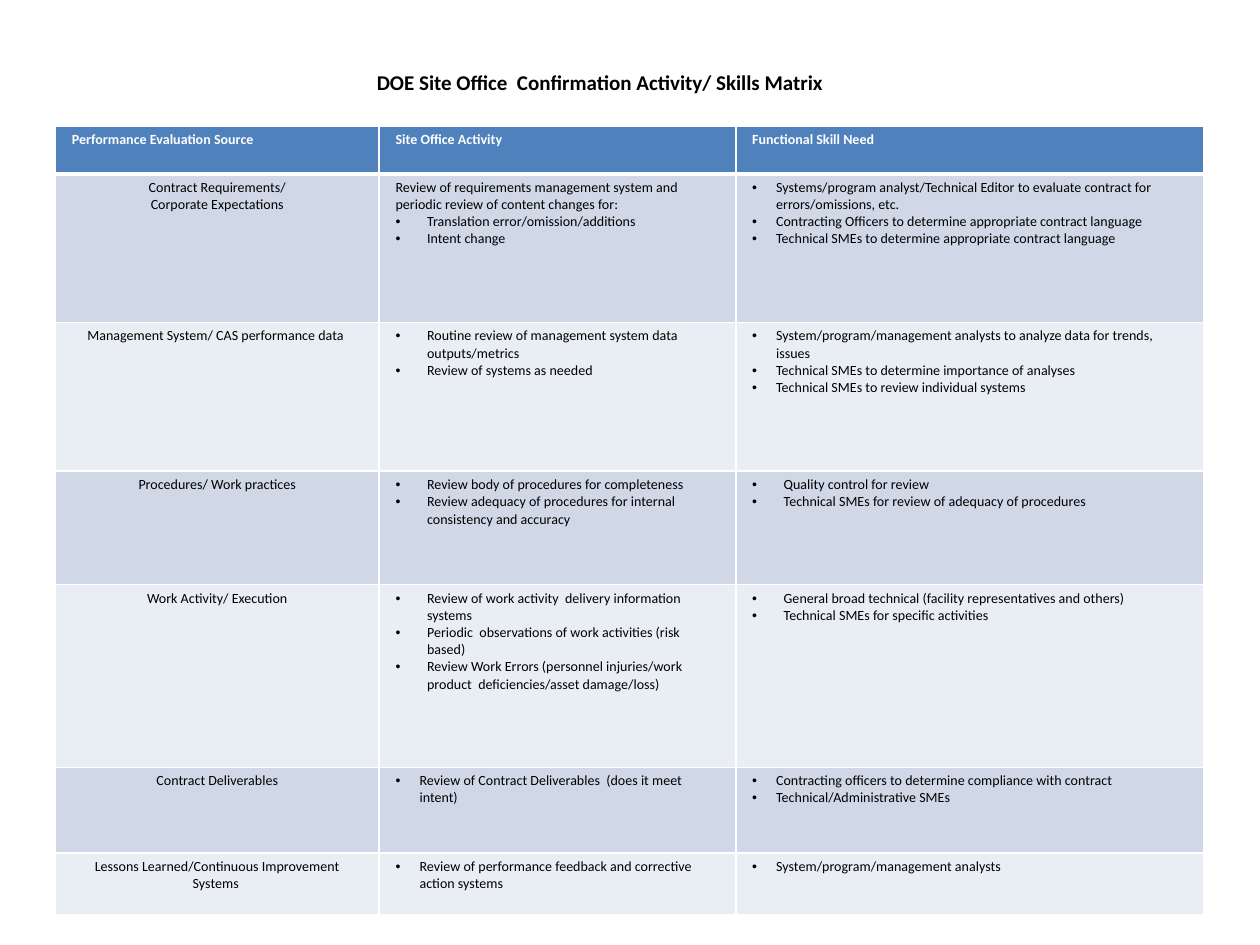
from lxml.etree import SubElement
from pptx import Presentation
from pptx.dml.color import RGBColor as Color
from pptx.enum.text import MSO_ANCHOR as Anchor, MSO_AUTO_SIZE as AutoSize, PP_ALIGN as Align
from pptx.oxml.ns import qn
from pptx.util import Inches, Pt

COLORS = {"header": "4F81BD", "odd": "D0D8E8", "even": "E9EDF4", "white": "FFFFFF", "black": "000000"}
FONT = "Calibri"
WIDE, NARROW = 0.25, 0.19
TITLE = "DOE Site Office  Confirmation Activity/ Skills Matrix"
HEADERS = ["Performance Evaluation Source", "Site Office Activity", "Functional Skill Need"]
COLUMN_WIDTHS = [2.57, 2.83, 3.71]
HEADER_HEIGHT = 0.38

ROWS = [
    {"height": 1.18,
     "source": ["Contract Requirements/", "Corporate Expectations"],
     "intro": ["Review of requirements management system and periodic review of content changes for:"],
     "activity": (WIDE, ["Translation error/omission/additions", "Intent change"]),
     "skill": (NARROW, ["Systems/program analyst/Technical Editor to evaluate contract for errors/omissions, etc.",
                        "Contracting Officers to determine appropriate contract language",
                        "Technical SMEs to determine appropriate contract language"])},
    {"height": 1.18,
     "source": ["Management System/ CAS performance data "],
     "activity": (WIDE, ["Routine review of management system data outputs/metrics",
                         "Review of systems as needed"]),
     "skill": (NARROW, ["System/program/management analysts to analyze data for trends, issues",
                        "Technical SMEs to determine importance of analyses",
                        "Technical SMEs to review individual systems"])},
    {"height": 0.9,
     "source": ["Procedures/ Work practices"],
     "activity": (WIDE, ["Review body of procedures for completeness",
                         "Review adequacy of procedures for internal consistency and accuracy"]),
     "skill": (WIDE, ["Quality control for review",
                      "Technical SMEs for review of adequacy of procedures"])},
    {"height": 1.45,
     "source": ["Work Activity/ Execution"],
     "activity": (WIDE, ["Review of work activity  delivery information systems",
                         "Periodic  observations of work activities (risk based)",
                         "Review Work Errors (personnel injuries/work product  deficiencies/asset damage/loss)"]),
     "skill": (WIDE, ["General broad technical (facility representatives and others)",
                      "Technical SMEs for specific activities"])},
    {"height": 0.68,
     "source": ["Contract Deliverables"],
     "activity": (NARROW, ["Review of Contract Deliverables  (does it meet intent)"]),
     "skill": (NARROW, ["Contracting officers to determine compliance with contract",
                        "Technical/Administrative SMEs"])},
    {"height": 0.49,
     "source": ["Lessons Learned/Continuous Improvement Systems "],
     "activity": (NARROW, ["Review of performance feedback and corrective action systems"]),
     "skill": (NARROW, ["System/program/management analysts"])},
]


def set_all(target, values):
    for name, value in values.items():
        setattr(target, name, value)


def write(frame, lines, size, color, bold=False):
    for number, (text, align, indent) in enumerate(lines):
        para = frame.paragraphs[0] if number == 0 else frame.add_paragraph()
        para.alignment = align
        span = para.add_run()
        span.text = text
        set_all(span.font, {"name": FONT, "size": Pt(size), "bold": bold})
        span.font.color.rgb = Color.from_string(COLORS[color])
        if indent:
            properties = para._p.get_or_add_pPr()
            properties.set("marL", str(Inches(indent)))
            properties.set("indent", str(-Inches(indent)))
            SubElement(properties, qn("a:buFont"), typeface="Arial")
            SubElement(properties, qn("a:buChar"), char="•")


def style_cell(cell, fill, top=1, bottom=1):
    set_all(cell, {"margin_left": Inches(0.13), "margin_right": Inches(0.13),
                   "margin_top": Inches(0.04), "margin_bottom": Inches(0.04),
                   "vertical_anchor": Anchor.TOP})
    properties = cell._tc.get_or_add_tcPr()
    for side, width in {"L": 1, "R": 1, "T": top, "B": bottom}.items():
        border = SubElement(properties, qn(f"a:ln{side}"), w=str(Pt(width)))
        paint = SubElement(border, qn("a:solidFill"))
        SubElement(paint, qn("a:srgbClr"), val=COLORS["white"])
    cell.fill.solid()
    cell.fill.fore_color.rgb = Color.from_string(COLORS[fill])


def bullets(group):
    indent, texts = group
    return [(text, Align.LEFT, indent) for text in texts]


def add_title(page):
    title = page.shapes.title
    set_all(title, {"left": Inches(2.89), "top": Inches(0.5), "width": Inches(3.79), "height": Inches(0.3)})
    set_all(title.text_frame, {"word_wrap": False, "auto_size": AutoSize.SHAPE_TO_FIT_TEXT,
                               "vertical_anchor": Anchor.TOP})
    write(title.text_frame, [(TITLE, Align.LEFT, 0)], 12, "black", True)


def add_matrix(page):
    heights = [HEADER_HEIGHT] + [row["height"] for row in ROWS]
    table = page.shapes.add_table(len(heights), len(HEADERS), Inches(0.44), Inches(1),
                                  Inches(sum(COLUMN_WIDTHS)), Inches(sum(heights))).table
    for column, width in zip(table.columns, COLUMN_WIDTHS):
        column.width = Inches(width)
    for line, height in zip(table.rows, heights):
        line.height = Inches(height)
    for index, text in enumerate(HEADERS):
        cell = table.cell(0, index)
        style_cell(cell, "header", bottom=3)
        write(cell.text_frame, [(text, Align.LEFT, 0)], 8, "white", True)
    for number, row in enumerate(ROWS, 1):
        contents = [
            [(text, Align.CENTER, 0) for text in row["source"]],
            [(text, Align.LEFT, 0) for text in row.get("intro", [])] + bullets(row["activity"]),
            bullets(row["skill"]),
        ]
        for index, lines in enumerate(contents):
            cell = table.cell(number, index)
            style_cell(cell, "odd" if number % 2 else "even", top=3 if number == 1 else 1)
            write(cell.text_frame, lines, 8, "black")


def main():
    deck = Presentation()
    set_all(deck, {"slide_width": Inches(10), "slide_height": Inches(7.5)})
    page = deck.slides.add_slide(deck.slide_layouts[5])
    add_title(page)
    add_matrix(page)
    deck.save("out.pptx")


if __name__ == "__main__":
    main()
